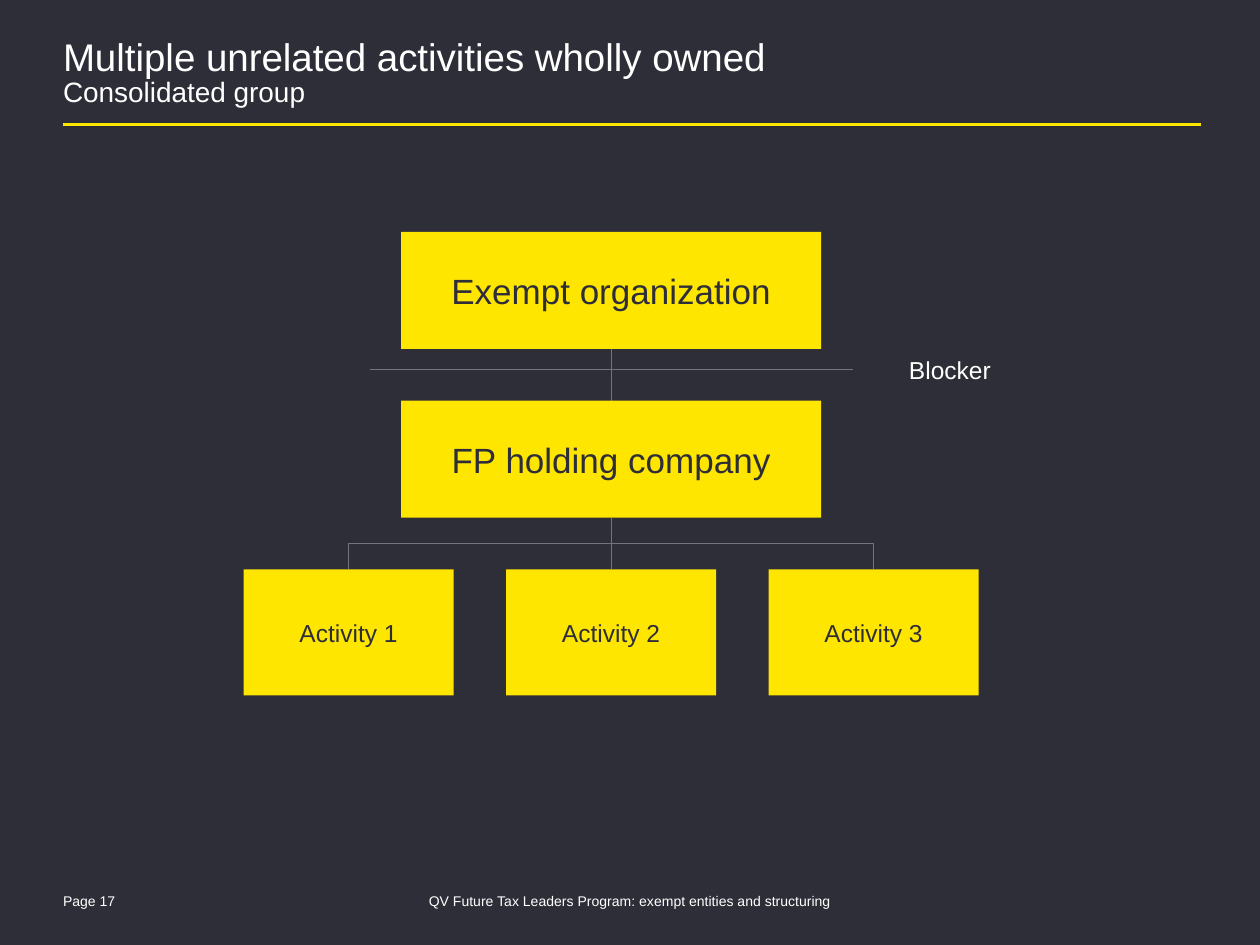
from dataclasses import dataclass

from lxml.etree import SubElement
from pptx import Presentation
from pptx.dml.color import RGBColor
from pptx.enum.shapes import MSO_CONNECTOR, MSO_SHAPE
from pptx.enum.text import MSO_ANCHOR, MSO_AUTO_SIZE, PP_ALIGN
from pptx.oxml.ns import qn
from pptx.util import Inches, Pt


@dataclass(frozen=True)
class Theme:
    font: str = "Arial"
    dark: RGBColor = RGBColor(0x2E, 0x2E, 0x38)
    light: RGBColor = RGBColor(0xFF, 0xFF, 0xFF)
    accent: RGBColor = RGBColor(0xFF, 0xE6, 0x00)
    grey: RGBColor = RGBColor(0x74, 0x74, 0x80)
    title: int = 22
    subtitle: int = 16
    entity: int = 20
    label: int = 14
    footer: int = 8
    rule: float = 1.5
    link: float = 0.5


T = Theme()

# Chart grid: columns are counted from the centre line, rows from the top box
MARGIN = 0.5
CENTRE, COL = 4.85, 5 / 12
TOP, ROW = 1.84, 1.34
ENTITY_W, ENTITY_H = 8 * COL, 0.93
ACTIVITY_W, ACTIVITY_H = 4 * COL, 1
ACTIVITY_PITCH = 5 * COL


def add_run(p, text, size, color):
    r = p.add_run()
    r.text = text
    r.font.name, r.font.size = T.font, Pt(size)
    r.font.color.rgb = color


def set_insets(tf, left=0, top=0, right=0, bottom=0):
    tf.margin_left, tf.margin_top = Inches(left), Inches(top)
    tf.margin_right, tf.margin_bottom = Inches(right), Inches(bottom)


def add_title(s, title, subtitle):
    sp = s.shapes.title
    sp.left, sp.top = Inches(MARGIN), Inches(0.32)
    sp.width, sp.height = Inches(9), Inches(0.65)
    tf = sp.text_frame
    tf.auto_size, tf.vertical_anchor = MSO_AUTO_SIZE.NONE, MSO_ANCHOR.TOP
    set_insets(tf)
    p = tf.paragraphs[0]
    p.alignment, p.line_spacing = PP_ALIGN.LEFT, 0.85
    p.space_before = Pt(0)
    add_run(p, title, T.title, T.light)
    p.add_line_break()
    SubElement(p._p[-1], qn("a:rPr"), sz=str(T.title * 100))
    add_run(p, subtitle, T.subtitle, T.light)


def add_text(s, x, y, w, h, text, size, align):
    sp = s.shapes.add_textbox(Inches(x), Inches(y), Inches(w), Inches(h))
    tf = sp.text_frame
    tf.word_wrap = True
    p = tf.paragraphs[0]
    p.alignment = align
    add_run(p, text, size, T.light)
    return tf


def add_footer(s, x, w, text, align):
    tf = add_text(s, x, 7.06, w, 0.15, text, T.footer, align)
    set_insets(tf, top=0.04)
    tf.paragraphs[0].line_spacing = 0.85


def add_box(s, centre, y, w, h, text, size):
    sp = s.shapes.add_shape(MSO_SHAPE.RECTANGLE, Inches(centre - w / 2),
                            Inches(y), Inches(w), Inches(h))
    sp.shadow.inherit = False
    sp.fill.solid()
    sp.fill.fore_color.rgb = T.accent
    sp.line.fill.background()
    tf = sp.text_frame
    tf.word_wrap, tf.vertical_anchor = True, MSO_ANCHOR.MIDDLE
    set_insets(tf)
    p = tf.paragraphs[0]
    p.alignment = PP_ALIGN.CENTER
    add_run(p, text, size, T.dark)


def add_line(s, x1, y1, x2, y2, color=T.grey, width=T.link,
             kind=MSO_CONNECTOR.STRAIGHT):
    c = s.shapes.add_connector(kind, Inches(x1), Inches(y1),
                               Inches(x2), Inches(y2))
    c.line.color.rgb, c.line.width = color, Pt(width)
    SubElement(c._element.spPr, qn("a:effectLst"))
    return c


def add_branch(s, x1, y1, x2, y2):
    """Elbow that leaves and arrives vertically: a quarter-turned connector."""
    cx, cy = (x1 + x2) / 2, (y1 + y2) / 2
    drop, reach = (y2 - y1) / 2, abs(x2 - x1) / 2
    side, turn = (1, 90) if x2 < x1 else (-1, 270)
    c = add_line(s, cx - side * drop, cy - reach, cx + side * drop, cy + reach,
                 kind=MSO_CONNECTOR.ELBOW)
    c._element.spPr.find(qn("a:xfrm")).set("rot", str(turn * 60000))


def add_structure(s):
    rows = [TOP + i * ROW for i in range(3)]

    # Owner and holding company
    for y, name in zip(rows, ("Exempt organization", "FP holding company")):
        add_box(s, CENTRE, y, ENTITY_W, ENTITY_H, name, T.entity)
        add_line(s, CENTRE, y + ENTITY_H, CENTRE, y + ROW)

    # Activities, with branches to the outer ones
    for i in (-1, 0, 1):
        x = CENTRE + i * ACTIVITY_PITCH
        add_box(s, x, rows[2], ACTIVITY_W, ACTIVITY_H, f"Activity {i + 2}", T.label)
        if i:
            add_branch(s, CENTRE, rows[1] + ENTITY_H, x, rows[2])

    # Blocker between the two entities
    half = 4.6 * COL
    add_line(s, CENTRE - half, 2.93, CENTRE + half, 2.93)
    add_text(s, 7.01, 2.77, 1.06, 0.33, "Blocker", T.label, PP_ALIGN.CENTER)


def main():
    prs = Presentation()
    prs.slide_width, prs.slide_height = Inches(10), Inches(7.5)
    s = prs.slides.add_slide(prs.slide_layouts[5])
    s.background.fill.solid()
    s.background.fill.fore_color.rgb = T.dark

    # Heading and rule
    add_title(s, "Multiple unrelated activities wholly owned", "Consolidated group")
    add_line(s, MARGIN, 0.99, 9.53, 0.99, T.accent, T.rule)

    add_structure(s)

    # Footer
    add_footer(s, MARGIN, 1.31, "Page 17", PP_ALIGN.LEFT)
    add_footer(s, 2.79, 4.42,
               "QV Future Tax Leaders Program: exempt entities and structuring",
               PP_ALIGN.CENTER)
    prs.save("out.pptx")


if __name__ == "__main__":
    main()
